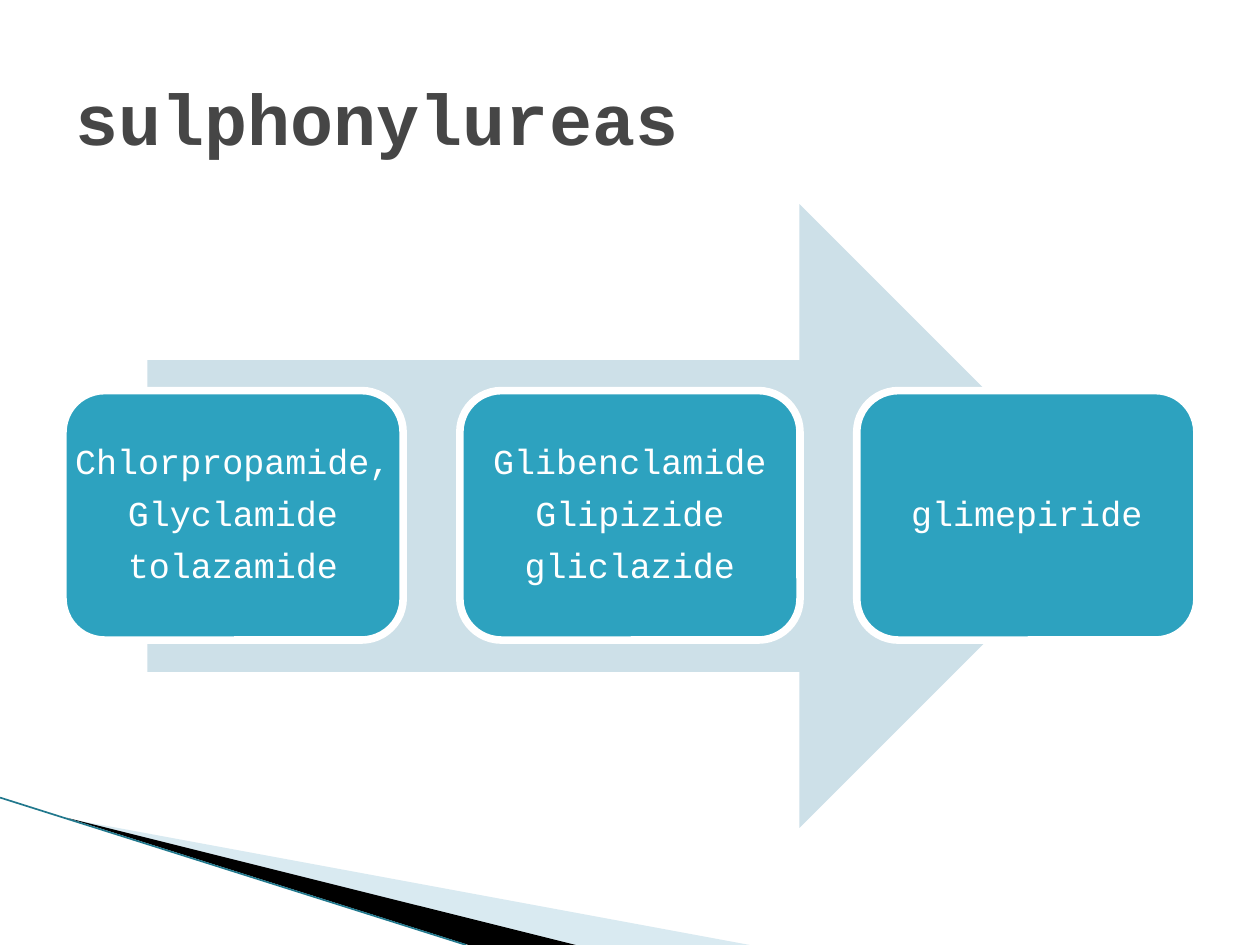
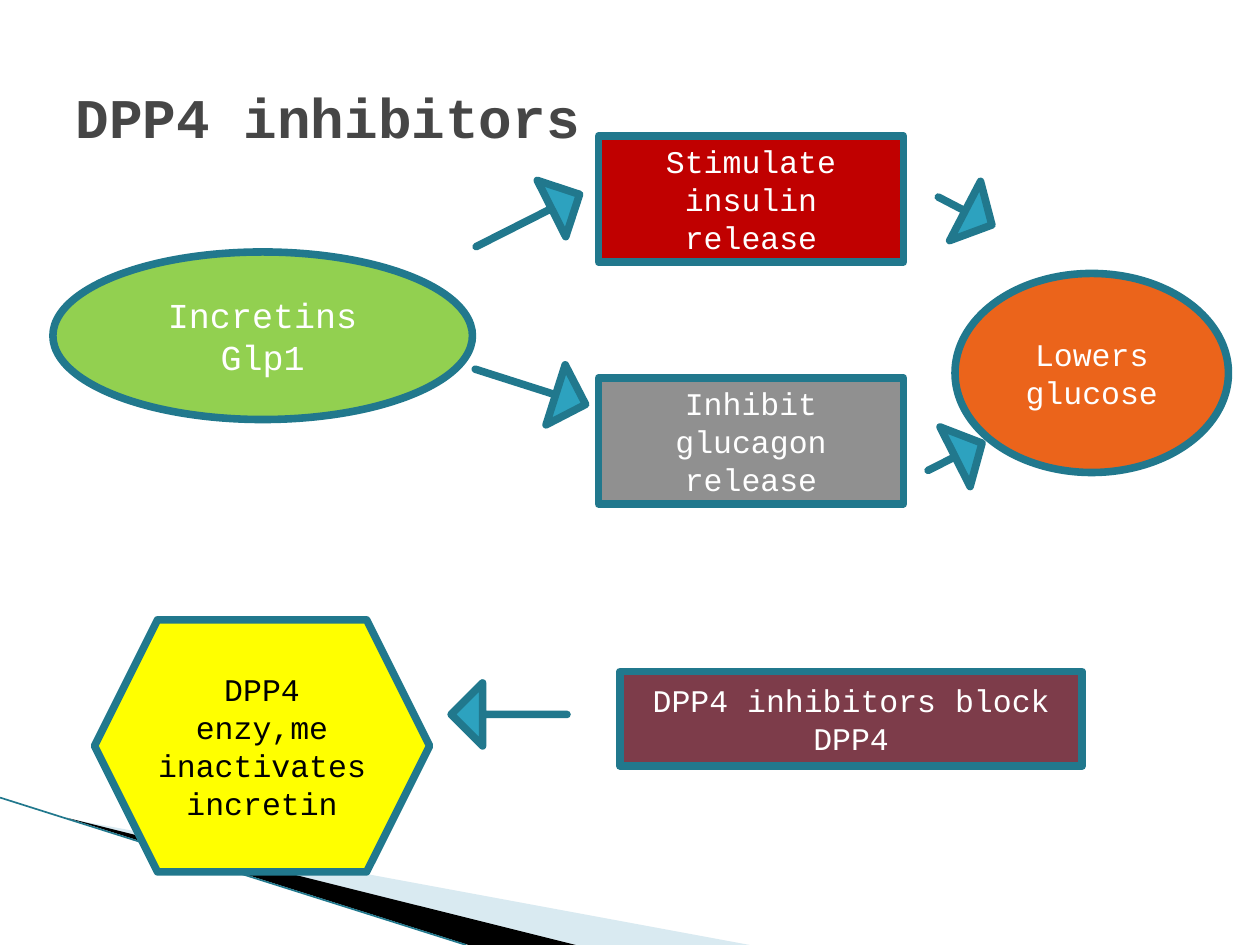
from dataclasses import dataclass

from lxml.etree import SubElement
from pptx import Presentation
from pptx.dml.color import RGBColor
from pptx.enum.shapes import MSO_CONNECTOR, MSO_SHAPE
from pptx.enum.text import MSO_ANCHOR, MSO_AUTO_SIZE, PP_ALIGN
from pptx.oxml.ns import qn
from pptx.shapes.autoshape import Shape
from pptx.slide import Slide
from pptx.util import Inches, Pt

FONT = "Courier New"
WHITE, BLACK, GREY = "FFFFFF", "000000", "464646"
TEAL, EDGE = "2DA2BF", "21788D"
PALE, MIST = "CDE0E8", "A0CBDC"
STROKE = 4.33


@dataclass
class Node:
    kind: MSO_SHAPE
    left: float
    top: float
    width: float
    height: float
    fill: str
    text: str = ""
    size: int = 18
    ink: str = WHITE
    line: str | None = EDGE
    turn: float = 0


@dataclass
class Band:
    points: list[tuple[float, float]]
    fill: str
    alpha: int = 100


BANDS = [
    Band([(0.55, 6.5), (5.95, 7.5), (4.56, 7.5)], MIST, 40),
    Band([(0.53, 6.49), (4.57, 7.5), (3.72, 7.5)], BLACK),
]

DRUGS = [
    "Chlorpropamide,\nGlyclamide\ntolazamide",
    "Glibenclamide\nGlipizide\ngliclazide",
    "glimepiride",
]

NODES = [
    Node(MSO_SHAPE.OVAL, 0.42, 2, 3.33, 1.33, "92D050", "Incretins\nGlp1", 20),
    Node(MSO_SHAPE.RECTANGLE, 4.75, 1.08, 2.42, 1, "C00000", "Stimulate insulin release"),
    Node(MSO_SHAPE.RECTANGLE, 4.75, 3, 2.42, 1, "909090", "Inhibit glucagon release"),
    Node(MSO_SHAPE.OVAL, 7.58, 2.17, 2.17, 1.58, "EB641B", "Lowers glucose"),
    Node(MSO_SHAPE.RECTANGLE, 4.92, 5.33, 3.67, 0.75, "7D3C4A", "DPP4 inhibitors block DPP4"),
    Node(MSO_SHAPE.HEXAGON, 0.75, 4.92, 2.66, 2, "FFFF00",
         "DPP4 enzy,me inactivates incretin", ink=BLACK),
]

LONG, SHORT = (0.92, 0.5), (0.48, 0.53)
ARROWS = [
    Node(MSO_SHAPE.RIGHT_ARROW, left, top, *size, TEAL, turn=turn)
    for left, top, size, turn in [
        (3.73, 1.5, LONG, 333.2),
        (3.75, 2.82, LONG, 17.7),
        (3.58, 5.42, LONG, 180),
        (7.34, 3.36, SHORT, 333.2),
        (7.42, 1.41, SHORT, 27.5),
    ]
]


def color(code: str) -> RGBColor:
    return RGBColor.from_string(code)


def paint(shape: Shape, fill: str, line: str | None) -> None:
    shape.shadow.inherit = False
    shape.fill.solid()
    shape.fill.fore_color.rgb = color(fill)
    if line:
        shape.line.color.rgb = color(line)
        shape.line.width = Pt(STROKE)
    else:
        shape.line.fill.background()


def write(shape: Shape, text: str, size: int, ink: str,
          align: PP_ALIGN = PP_ALIGN.CENTER, bold: bool = False) -> None:
    frame = shape.text_frame
    frame.text = text
    frame.word_wrap = True
    frame.vertical_anchor = MSO_ANCHOR.MIDDLE
    for para in frame.paragraphs:
        para.alignment = align
        for run in para.runs:
            font = run.font
            font.name, font.size, font.bold = FONT, Pt(size), bold
            font.color.rgb = color(ink)


def place(slide: Slide, node: Node) -> Shape:
    spot = map(Inches, (node.left, node.top, node.width, node.height))
    shape = slide.shapes.add_shape(node.kind, *spot)
    shape.rotation = node.turn
    paint(shape, node.fill, node.line)
    if node.text:
        write(shape, node.text, node.size, node.ink)
    return shape


def sweep(slide: Slide, band: Band) -> None:
    points = [(Inches(x), Inches(y)) for x, y in band.points]
    pen = slide.shapes.build_freeform(*points[0])
    pen.add_line_segments(points[1:])
    shape = pen.convert_to_shape()
    paint(shape, band.fill, None)
    if band.alpha < 100:
        tone = shape.fill._xPr.find(qn("a:solidFill"))[0]
        SubElement(tone, qn("a:alpha"), val=str(band.alpha * 1000))


def start(deck: Presentation, title: str, size: int) -> Slide:
    slide = deck.slides.add_slide(deck.slide_layouts[5])
    for band in BANDS:
        sweep(slide, band)
    rule = slide.shapes.add_connector(
        MSO_CONNECTOR.STRAIGHT, Inches(0), Inches(6.33), Inches(3.7), Inches(7.5))
    rule.line.color.rgb = color(EDGE)
    rule.line.width = Pt(0.95)
    SubElement(rule._element.spPr, qn("a:effectLst"))
    head = slide.shapes.title
    head.left, head.top = Inches(0.5), Inches(0.3)
    head.width, head.height = Inches(9), Inches(1.25)
    write(head, title, size, GREY, PP_ALIGN.LEFT, True)
    head.text_frame.auto_size = MSO_AUTO_SIZE.NONE
    return slide


def draw_drugs(deck: Presentation) -> None:
    slide = start(deck, "sulphonylureas", 41)
    place(slide, Node(MSO_SHAPE.RIGHT_ARROW, 1.17, 1.62, 7.65, 4.95, PALE, line=None))
    for index, text in enumerate(DRUGS):
        card = place(slide, Node(MSO_SHAPE.ROUNDED_RECTANGLE, 0.5 + 3.15 * index, 3.1,
                                 2.7, 1.98, TEAL, text, 20, line=WHITE))
        card.text_frame.word_wrap = False
        for para in card.text_frame.paragraphs:
            para.line_spacing = 0.9
            para.space_after = Pt(8)


def draw_path(deck: Presentation) -> None:
    slide = start(deck, "DPP4 inhibitors", 32)
    for node in NODES:
        place(slide, node)
    for node in ARROWS:
        arrow = place(slide, node)
        arrow.adjustments[0] = 0
        arrow.adjustments[1] = 0.5


def main() -> None:
    deck = Presentation()
    deck.slide_width, deck.slide_height = Inches(10), Inches(7.5)
    draw_drugs(deck)
    draw_path(deck)
    deck.save("out.pptx")


if __name__ == "__main__":
    main()
